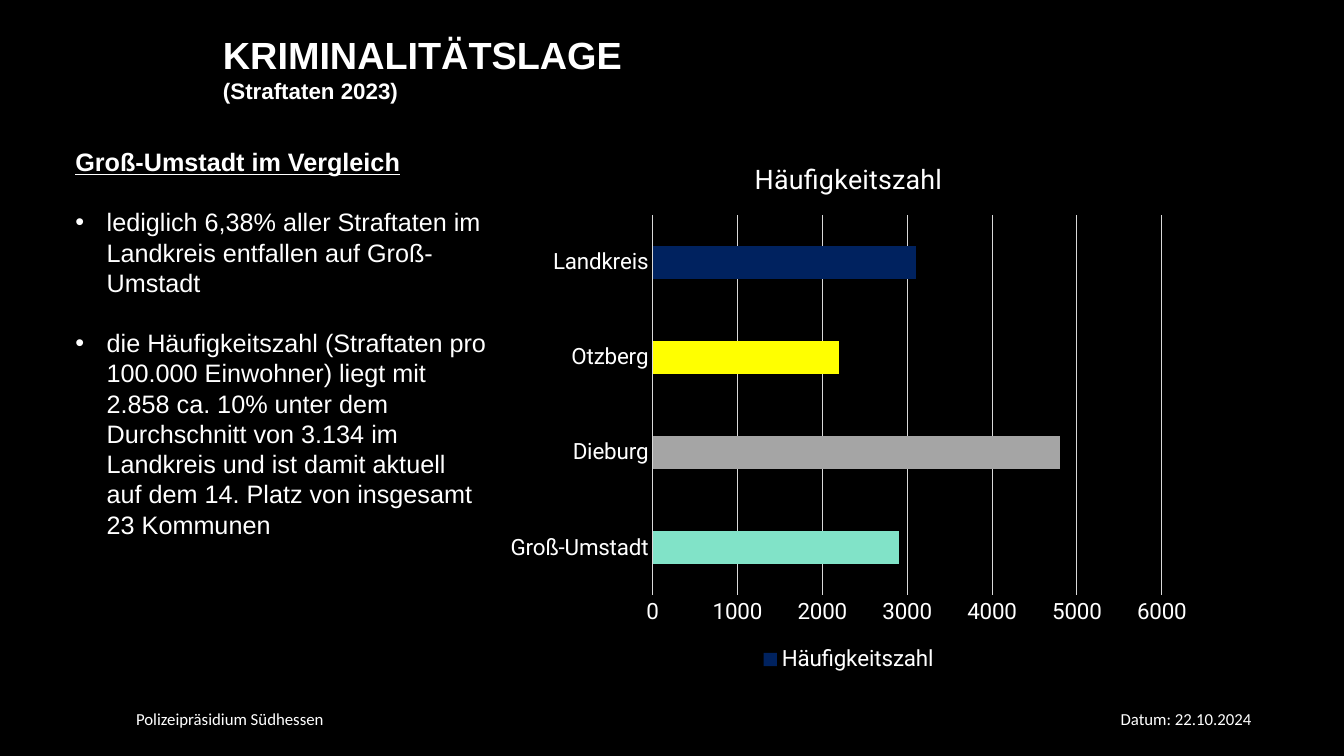
"""Build the slide on the crime situation in Groß-Umstadt."""
from pptx import Presentation
from pptx import util as u
from pptx.chart import data
from pptx.dml.color import RGBColor
from pptx.enum import chart as ch
from pptx.enum import text
from pptx.oxml import parse_xml
from pptx.oxml.ns import nsdecls

BLACK = RGBColor(0x00, 0x00, 0x00)
WHITE = RGBColor(0xFF, 0xFF, 0xFF)
GRID = RGBColor(0xD9, 0xD9, 0xD9)
NAVY = RGBColor(0x00, 0x22, 0x5F)
MINT = RGBColor(0x81, 0xE3, 0xC8)
GREY = RGBColor(0xA5, 0xA5, 0xA5)
YELLOW = RGBColor(0xFF, 0xFF, 0x00)

TOWNS = [
    ("Groß-Umstadt", 2900, MINT),
    ("Dieburg", 4800, GREY),
    ("Otzberg", 2200, YELLOW),
    ("Landkreis", 3100, NAVY),
]
FINDINGS = [
    "lediglich 6,38% aller Straftaten im Landkreis entfallen auf Groß-Umstadt",
    "die Häufigkeitszahl (Straftaten pro 100.000 Einwohner) liegt mit 2.858 "
    "ca. 10% unter dem Durchschnitt von 3.134 im Landkreis und ist damit "
    "aktuell auf dem 14. Platz von insgesamt 23 Kommunen",
]


def style(font, name, size, bold=False):
    """Give a font its name, size, weight and the white colour."""
    font.name, font.size, font.bold = name, u.Pt(size), bold
    font.color.rgb = WHITE


def add_box(slide, left, top, width, height, inset=0.13):
    """Add a wrapping text box and return its text frame."""
    frame = slide.shapes.add_textbox(
        u.Cm(left), u.Cm(top), u.Cm(width), u.Cm(height)).text_frame
    frame.word_wrap = True
    frame.margin_left = frame.margin_right = u.Cm(inset)
    frame.margin_top = frame.margin_bottom = u.Cm(0.13)
    return frame


def write(paragraph, words, name, size, bold=False):
    """Add one styled run to a paragraph and return it."""
    run = paragraph.add_run()
    run.text = words
    style(run.font, name, size, bold)
    return run


def indent(paragraph, margin, first):
    """Set the left margin and first-line indent of a paragraph."""
    properties = paragraph._p.get_or_add_pPr()
    properties.set("marL", str(u.Cm(margin)))
    properties.set("indent", str(u.Cm(first)))
    return properties


def add_footer(slide, words, left, align):
    """Add one line of footer text."""
    line = add_box(slide, left, 17.73, 5.61, 0.73).paragraphs[0]
    line.alignment = align
    write(line, words, "Calibri", 12)


def add_heading(slide):
    """Add the slide heading with its subtitle."""
    frame = add_box(slide, 4.22, 0.66, 25.15, 2.87)
    heading, subtitle = frame.paragraphs[0], frame.add_paragraph()
    for line, words, size in ((heading, "KRIMINALITÄTSLAGE", 27),
                              (subtitle, "(Straftaten 2023)", 16)):
        line.level = 1
        indent(line, 0, 1.27)
        write(line, words, "Arial", size, True)


def add_findings(slide):
    """Add the comparison text with its bulleted findings."""
    frame = add_box(slide, 1.65, 3.56, 10.87, 10.26, 0.25)
    intro = frame.paragraphs[0]
    write(intro, "Groß-Umstadt im Vergleich", "Arial", 18, True).font.underline = True
    for words in FINDINGS:
        finding = frame.add_paragraph()
        finding.space_before = u.Pt(21.5)
        properties = indent(finding, 0.79, -0.79)
        for bullet in ('<a:buFont %s typeface="Arial"/>', '<a:buChar %s char="•"/>'):
            properties.append(parse_xml(bullet % nsdecls("a")))
        write(finding, words, "Arial", 18)


def style_axes(chart):
    """Style the town axis, the value axis and its grid lines."""
    towns, rate = chart.category_axis, chart.value_axis
    for axis in (towns, rate):
        axis.major_tick_mark = axis.minor_tick_mark = ch.XL_TICK_MARK.NONE
        style(axis.tick_labels.font, "Roboto", 16)
    rate.minimum_scale, rate.maximum_scale, rate.major_unit = 0, 6000, 1000
    rate.format.line.fill.background()
    rate.has_major_gridlines = True
    for line in (towns.format.line, rate.major_gridlines.format.line):
        line.color.rgb = GRID
        line.width = u.Pt(0.75)


def add_rate_chart(slide):
    """Add the bar chart of the crime rate per town."""
    names, rates, colours = zip(*TOWNS)
    figures = data.CategoryChartData()
    figures.categories = names
    figures.add_series("Häufigkeitszahl", rates)
    chart = slide.shapes.add_chart(
        ch.XL_CHART_TYPE.BAR_CLUSTERED, u.Cm(12.51), u.Cm(3.54),
        u.Cm(17.75), u.Cm(13.51), figures).chart
    style(chart.font, "Roboto", 16)
    chart.has_title = True
    write(chart.chart_title.text_frame.paragraphs[0],
          "Häufigkeitszahl", "Roboto", 19.2)
    chart.chart_title.include_in_layout = False
    chart.has_legend = True
    chart.legend.position = ch.XL_LEGEND_POSITION.BOTTOM
    chart.legend.include_in_layout = False
    style(chart.legend.font, "Roboto", 16)
    style_axes(chart)
    plot = chart.plots[0]
    plot.gap_width = 182
    plot.vary_by_categories = False
    bars = plot.series[0]
    bars.invert_if_negative = False
    bars.format.fill.solid()
    bars.format.fill.fore_color.rgb = NAVY
    for index, colour in enumerate(colours):
        if colour != NAVY:
            fill = bars.points[index].format.fill
            fill.solid()
            fill.fore_color.rgb = colour


def main():
    """Assemble and save the slide."""
    deck = Presentation()
    deck.slide_width, deck.slide_height = u.Cm(33.87), u.Cm(19.05)
    slide = deck.slides.add_slide(deck.slide_layouts[6])
    slide.background.fill.solid()
    slide.background.fill.fore_color.rgb = BLACK
    add_footer(slide, "Datum: 22.10.2024", 26.06, text.PP_ALIGN.RIGHT)
    add_footer(slide, "Polizeipräsidium Südhessen", 3.3, text.PP_ALIGN.LEFT)
    add_heading(slide)
    add_findings(slide)
    add_rate_chart(slide)
    deck.save("out.pptx")


if __name__ == "__main__":
    main()
